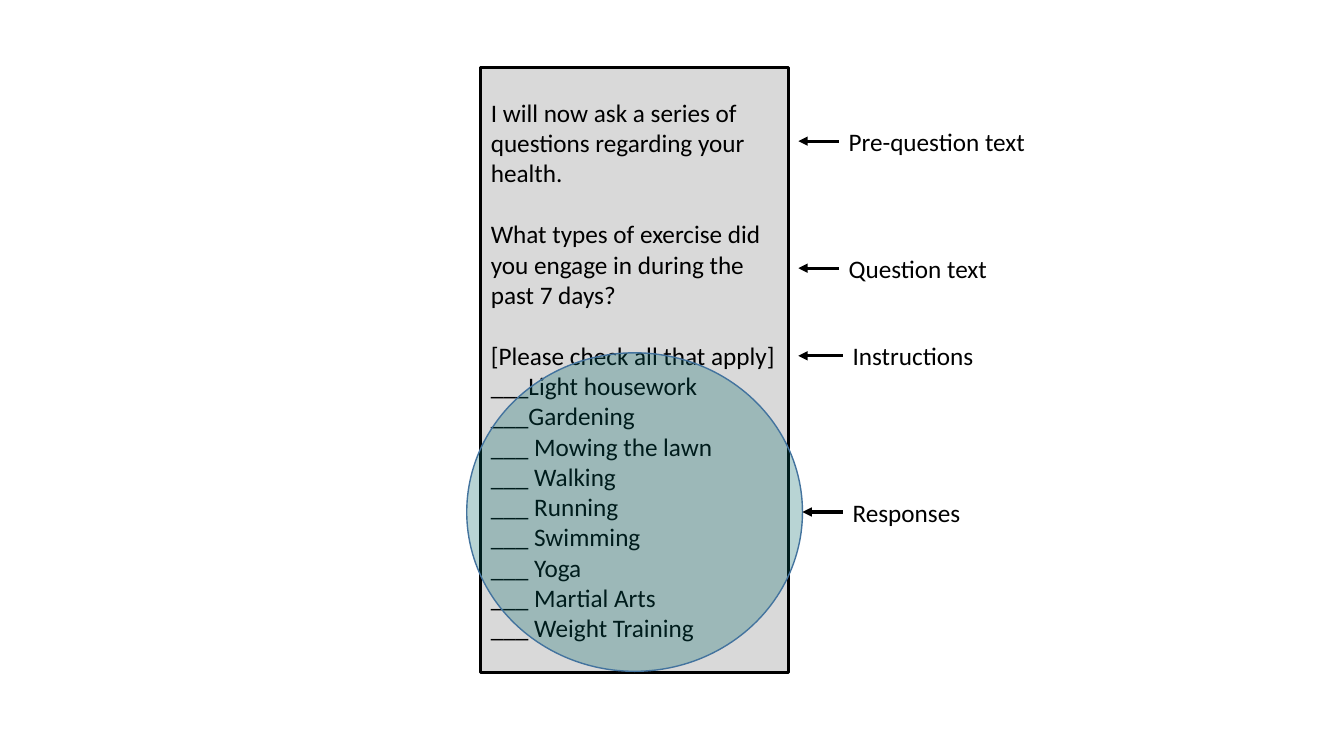
from dataclasses import dataclass

from lxml import etree
from pptx import Presentation
from pptx.dml.color import RGBColor
from pptx.enum.shapes import MSO_CONNECTOR, MSO_SHAPE
from pptx.enum.text import MSO_ANCHOR, MSO_AUTO_SIZE, PP_ALIGN
from pptx.oxml.ns import qn
from pptx.util import Inches, Pt

RECT, OVAL = MSO_SHAPE.RECTANGLE, MSO_SHAPE.OVAL
STRAIGHT = MSO_CONNECTOR.STRAIGHT
LEFT, MIDDLE = PP_ALIGN.LEFT, MSO_ANCHOR.MIDDLE
FIT_SHAPE = MSO_AUTO_SIZE.SHAPE_TO_FIT_TEXT

COLORS = {"ink": "000000", "panel": "D9D9D9", "teal": "006666", "rim": "43739E"}
FONT, SIZE = "Calibri", Pt(18)
LINE_GAP = Pt(22)  # one line of text
SLIDE_W, SLIDE_H = Inches(13.33), Inches(7.5)
LEFT_SIDE = 1
LABEL_H = 5.33
OVAL_ALPHA = 28


@dataclass
class Box:
    """Position and size in percent of the slide."""
    x: float
    y: float
    w: float
    h: float


@dataclass
class Callout:
    """Label with an arrow from its left side; percent of the slide."""
    text: str
    x: float
    mid: float
    w: float
    tip: float


PANEL = Box(35.78, 8.93, 22.88, 80)
RESPONSE_OVAL = Box(34.73, 46.67, 24.98, 42.13)

INTRO = [
    "I will now ask a series of questions regarding your health.",
    "What types of exercise did you engage in during the past 7 days?",
]
CHOICES = [
    "[Please check all that apply]",
    "___Light housework",
    "___Gardening",
    "___ Mowing the lawn",
    "___ Walking",
    "___ Running",
    "___ Swimming",
    "___ Yoga",
    "___ Martial Arts",
    "___ Weight Training",
]
CALLOUTS = [
    Callout("Pre-question text", 62.4, 18.67, 14.78, 59.4),
    Callout("Question text", 62.4, 35.47, 11.93, 59.4),
    Callout("Instructions", 62.7, 47.07, 10.58, 59.4),
    Callout("Responses", 62.7, 67.73, 9.6, 59.7),
]


def across(share: float) -> int:
    return round(SLIDE_W * share / 100)


def down(share: float) -> int:
    return round(SLIDE_H * share / 100)


def place(box: Box) -> tuple[int, int, int, int]:
    return across(box.x), down(box.y), across(box.w), down(box.h)


def color(name: str) -> RGBColor:
    return RGBColor.from_string(COLORS[name])


def style_paragraph(p, text: str) -> None:
    p.text = text
    p.alignment = LEFT
    p.font.name, p.font.size = FONT, SIZE
    p.font.color.rgb = color("ink")


def add_box(slide, kind: int, box: Box, fill: str, line: str, width: float):
    s = slide.shapes.add_shape(kind, *place(box))
    s.shadow.inherit = False
    s.fill.solid()
    s.fill.fore_color.rgb = color(fill)
    s.line.color.rgb = color(line)
    s.line.width = Pt(width)
    return s


def add_panel(slide) -> None:
    tf = add_box(slide, RECT, PANEL, "panel", "ink", 2.25).text_frame
    tf.word_wrap = True
    tf.vertical_anchor = MIDDLE
    for i, text in enumerate(INTRO + CHOICES):
        p = tf.paragraphs[0] if i == 0 else tf.add_paragraph()
        style_paragraph(p, text)
        if text in INTRO:
            p.space_after = LINE_GAP


def add_response_oval(slide) -> None:
    s = add_box(slide, OVAL, RESPONSE_OVAL, "teal", "rim", 1)
    fill = s._element.spPr.find(qn("a:solidFill"))
    etree.SubElement(fill[0], qn("a:alpha"), val=str(OVAL_ALPHA * 1000))


def add_callout(slide, c: Callout) -> None:
    box = Box(c.x, c.mid - LABEL_H / 2, c.w, LABEL_H)
    label = slide.shapes.add_textbox(*place(box))
    tf = label.text_frame
    tf.word_wrap = False
    tf.auto_size = FIT_SHAPE
    style_paragraph(tf.paragraphs[0], c.text)

    y = down(c.mid)
    arrow = slide.shapes.add_connector(STRAIGHT, across(c.x), y, across(c.tip), y)
    arrow.begin_connect(label, LEFT_SIDE)
    arrow.line.color.rgb = color("ink")
    arrow.line.width = Pt(2.25)
    etree.SubElement(arrow.line._get_or_add_ln(), qn("a:tailEnd"), type="triangle")
    etree.SubElement(arrow._element.spPr, qn("a:effectLst"))


def main() -> None:
    prs = Presentation()
    prs.slide_width, prs.slide_height = SLIDE_W, SLIDE_H
    slide = prs.slides.add_slide(prs.slide_layouts[6])

    # Questionnaire
    add_panel(slide)
    add_response_oval(slide)

    # Labels of its parts
    for callout in CALLOUTS:
        add_callout(slide, callout)

    prs.save("out.pptx")


if __name__ == "__main__":
    main()
